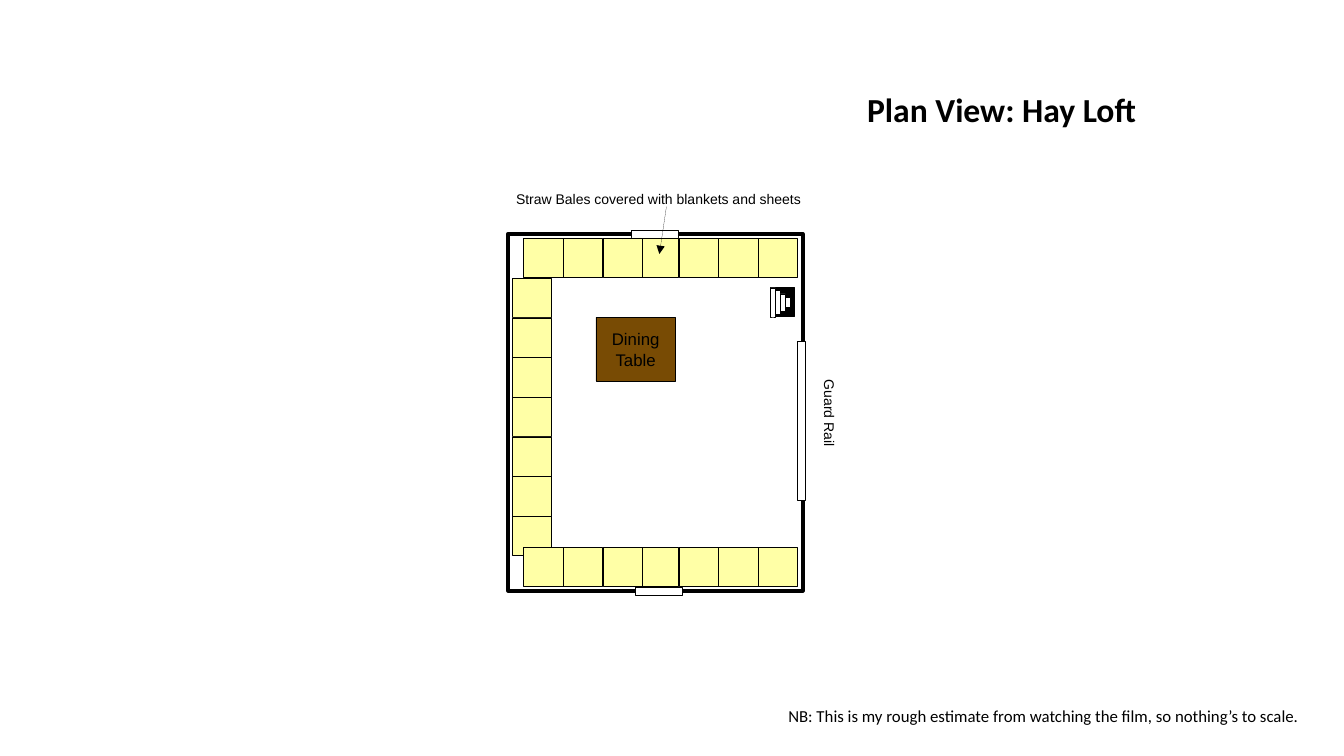
"""Build the plan view of the hay loft."""
from dataclasses import dataclass

from lxml import etree
from pptx import Presentation
from pptx import util as u
from pptx.dml.color import RGBColor
from pptx.enum import shapes, text
from pptx.oxml.ns import qn

COLOURS = {"black": "000000", "white": "FFFFFF", "straw": "FFFFA6", "wood": "784B04"}
HAIRLINE = 0.28
BALE = 0.39
BALE_PITCH = 1 / 2.54


@dataclass(frozen=True)
class Block:
    left: float
    top: float
    width: float
    height: float
    fill: str = "white"
    line: float = HAIRLINE
    label: str = ""
    size: float = 10
    wrap: bool = False
    rotation: float = 0


def colour(name: str) -> RGBColor:
    return RGBColor.from_string(COLOURS[name])


def write(shape, wording: str, *, size: float, font: str = "Calibri", bold: bool = False,
          wrap: bool = True, align=text.PP_ALIGN.LEFT, anchor=text.MSO_ANCHOR.TOP) -> None:
    frame = shape.text_frame
    frame.text = wording
    frame.auto_size = text.MSO_AUTO_SIZE.NONE
    frame.word_wrap = wrap
    frame.vertical_anchor = anchor
    paragraph = frame.paragraphs[0]
    paragraph.alignment = align
    paragraph.line_spacing = 1.0
    paragraph.space_before = u.Pt(0)
    paragraph.font.name = font
    paragraph.font.size = u.Pt(size)
    paragraph.font.bold = bold
    paragraph.font.color.rgb = colour("black")


def draw_block(container, block: Block) -> None:
    box = map(u.Inches, (block.left, block.top, block.width, block.height))
    shape = container.add_shape(shapes.MSO_SHAPE.RECTANGLE, *box)
    shape.shadow.inherit = False
    shape.rotation = block.rotation
    shape.fill.solid()
    shape.fill.fore_color.rgb = colour(block.fill)
    if block.line:
        shape.line.color.rgb = colour("black")
        shape.line.width = u.Pt(block.line)
    else:
        shape.line.fill.background()
    if block.label:
        write(shape, block.label, size=block.size, font="Arial", wrap=block.wrap,
              align=text.PP_ALIGN.CENTER, anchor=text.MSO_ANCHOR.MIDDLE)


def draw_blocks(container, blocks: list[Block]) -> None:
    for block in blocks:
        draw_block(container, block)


def bale_row(top: float) -> list[Block]:
    lefts = [start - BALE_PITCH * step
             for start, count in ((7.52, 4), (5.98, 3)) for step in range(count)]
    return [Block(left, top, BALE, BALE, "straw") for left in lefts]


def bale_column(left: float, top: float, count: int) -> list[Block]:
    return [Block(left, top + BALE_PITCH * step, BALE, BALE, "straw") for step in range(count)]


def draw_arrow(container, start: tuple[float, float], end: tuple[float, float]) -> None:
    arrow = container.add_connector(shapes.MSO_CONNECTOR.STRAIGHT, *map(u.Inches, start + end))
    arrow.line.color.rgb = colour("black")
    arrow.line.width = u.Pt(0.1)
    etree.SubElement(arrow.line._get_or_add_ln(), qn("a:tailEnd"), type="triangle")
    etree.SubElement(arrow._element.spPr, qn("a:effectLst"))


def main() -> None:
    presentation = Presentation()
    presentation.slide_width = u.Inches(13.33)
    presentation.slide_height = u.Inches(7.5)
    slide = presentation.slides.add_slide(presentation.slide_layouts[5])

    title = slide.shapes.title
    title.left, title.top = u.Inches(8.5), u.Inches(0.83)
    title.width, title.height = u.Inches(3.62), u.Inches(0.5)
    write(title, "Plan View: Hay Loft", size=24, bold=True)
    note = slide.shapes.add_textbox(*map(u.Inches, (7.72, 6.95, 5.43, 0.37)))
    write(note, "NB: This is my rough estimate from watching the film, so nothing’s to scale.", size=12)

    walls = Block(5.04, 2.32, 2.92, 3.54, line=2.83)
    bottom_window = Block(6.3, 5.83, 0.47, 0.08)
    top_window = Block(6.26, 2.28, 0.47, 0.08)
    guard_rail = Block(7.91, 3.39, 0.08, 1.57)
    bales_label = Block(6.06, 1.85, 0.94, 0.24, line=0,
                        label="Straw Bales covered with blankets and sheets")
    rail_label = Block(7.76, 3.98, 0.94, 0.24, line=0, label="Guard Rail", rotation=90)
    dining_table = Block(5.91, 3.15, 0.79, 0.63, "wood", label="Dining Table", size=12, wrap=True)
    draw_blocks(slide.shapes, [walls, bottom_window, guard_rail, bales_label, top_window,
                               dining_table, *bale_row(2.36), *bale_column(5.08, 2.76, 7),
                               *bale_row(5.43), rail_label])
    draw_arrow(slide.shapes, (6.61, 2.05), (6.54, 2.52))

    stairs = slide.shapes.add_group_shape()
    treads = [Block(7.64 + 0.05 * step, 3 - height / 2, 0.05, height)
              for step, height in enumerate((0.29, 0.24, 0.17, 0.1))]
    draw_blocks(stairs.shapes, [Block(7.64, 2.85, 0.24, 0.29, "black"), *treads])

    presentation.save("out.pptx")


if __name__ == "__main__":
    main()
